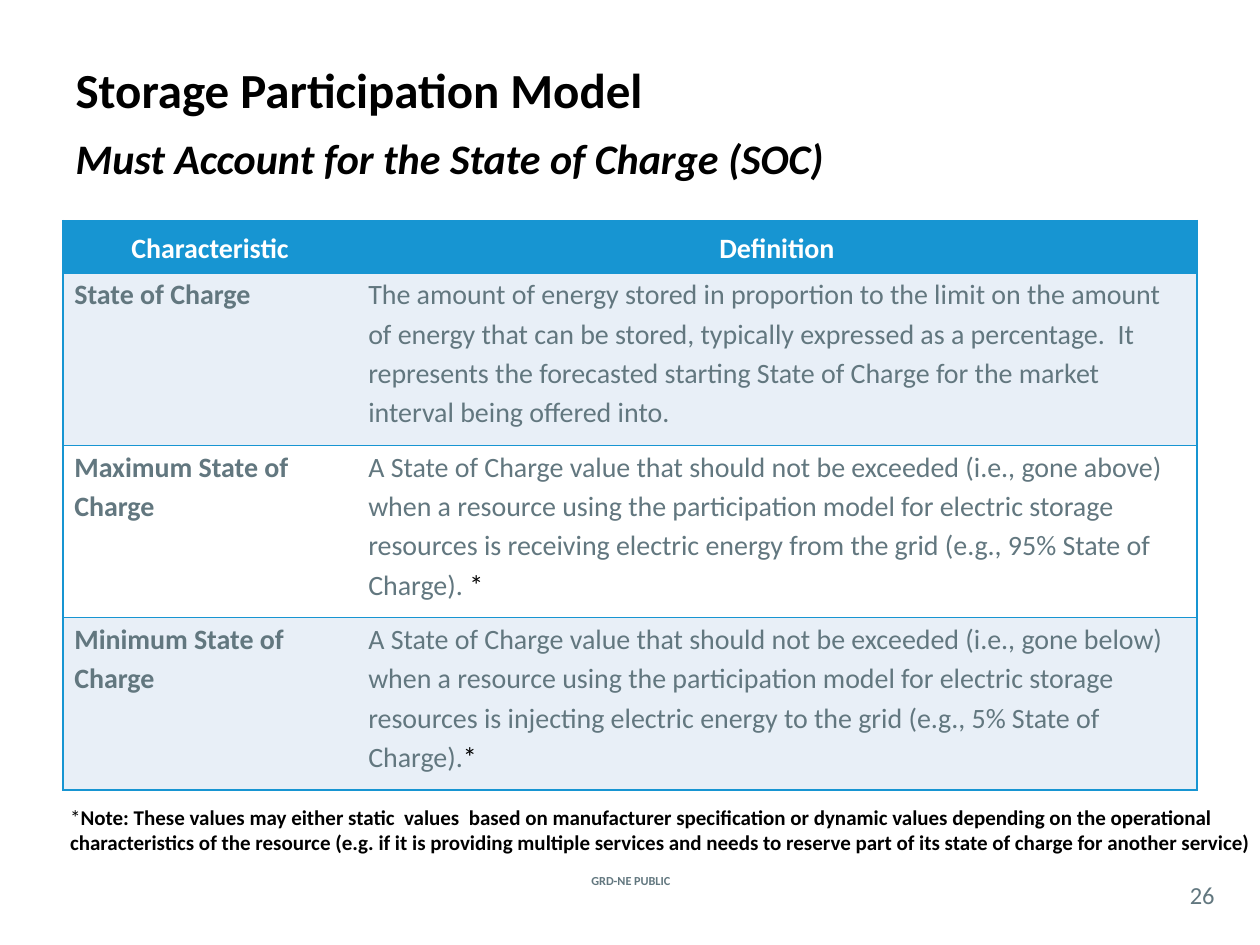
from lxml.etree import SubElement
from pptx import Presentation
from pptx.dml.color import RGBColor
from pptx.enum.text import MSO_ANCHOR as Anchor, PP_ALIGN as Align
from pptx.oxml.ns import qn
from pptx.util import Pt

BLUE = RGBColor(0x17, 0x95, 0xD2)
PALE = RGBColor(0xE8, 0xEF, 0xF7)
GRAY = RGBColor(0x62, 0x77, 0x7F)
BLACK = RGBColor(0, 0, 0)
WHITE = RGBColor(255, 255, 255)

TITLE = "Storage Participation Model"
SUBTITLE = "Must Account for the State of Charge (SOC)"
HEADS = ("Characteristic", "Definition")
# term, definition, footnote mark
TERMS = [
    ("State of Charge",
     "The amount of energy stored in proportion to the limit on the amount of "
     "energy that can be stored, typically expressed as a percentage.  It "
     "represents the forecasted starting State of Charge for the market "
     "interval being offered into.", ""),
    ("Maximum State of Charge",
     "A State of Charge value that should not be exceeded (i.e., gone above) "
     "when a resource using the participation model for electric storage "
     "resources is receiving electric energy from the grid (e.g., 95% State "
     "of Charge). ", "*"),
    ("Minimum State of Charge",
     "A State of Charge value that should not be exceeded (i.e., gone below) "
     "when a resource using the participation model for electric storage "
     "resources is injecting electric energy to the grid (e.g., 5% State of "
     "Charge).", "*"),
]
NOTE = [
    "Note: These values may either static  values  based on manufacturer "
    "specification or dynamic values depending on the operational",
    "characteristics of the resource (e.g. if it is providing multiple services "
    "and needs to reserve part of its state of charge for another service)",
]
LABEL = "GRD-NE PUBLIC"
PAGE = "26"

COLS = (168, 480)
ROWS = (30, 98.5, 98.5, 98.5)


def write(para, text, size=16, color=BLACK, bold=False, italic=False,
          align=Align.LEFT, line=1, after=0):
    para.alignment, para.line_spacing = align, line
    para.space_before, para.space_after = Pt(0), Pt(after)
    run = para.add_run()
    run.text = text
    font = run.font
    font.name, font.size = "Calibri", Pt(size)
    font.bold, font.italic = bold, italic
    font.color.rgb = color


def place(shape, left, top, width, height):
    shape.left, shape.top = Pt(left), Pt(top)
    shape.width, shape.height = Pt(width), Pt(height)


def add_box(slide, area, anchor=Anchor.TOP, wrap=True):
    frame = slide.shapes.add_textbox(*map(Pt, area)).text_frame
    frame.word_wrap, frame.vertical_anchor = wrap, anchor
    return frame


def edge(cell, sides):
    """Draw blue lines on the given sides and clear the others."""
    props = cell._tc.get_or_add_tcPr()
    for side in "LRTB":
        line = SubElement(props, qn(f"a:ln{side}"), w=str(Pt(1)))
        if side in sides:
            fill = SubElement(line, qn("a:solidFill"))
            SubElement(fill, qn("a:srgbClr"), val=str(BLUE))
        else:
            SubElement(line, qn("a:noFill"))


def add_terms(slide):
    table = slide.shapes.add_table(
        len(ROWS), len(COLS), Pt(36), Pt(126), Pt(sum(COLS)), Pt(sum(ROWS))).table
    table.horz_banding = False
    for col, width in zip(table.columns, COLS):
        col.width = Pt(width)
    for row, height in zip(table.rows, ROWS):
        row.height = Pt(height)

    for r, (term, text, mark) in enumerate([(*HEADS, ""), *TERMS]):
        head = r == 0
        back = BLUE if head else PALE if r % 2 else WHITE
        look = dict(color=WHITE if head else GRAY, line=1.15, after=10,
                    align=Align.CENTER if head else Align.LEFT)
        for c, words in enumerate((term, text)):
            cell = table.cell(r, c)
            edge(cell, "LTB" if c == 0 else "RTB")
            cell.fill.solid()
            cell.fill.fore_color.rgb = back
            cell.margin_left = cell.margin_right = Pt(6.5)
            cell.margin_top = cell.margin_bottom = Pt(0)
            cell.vertical_anchor = Anchor.MIDDLE if head else Anchor.TOP
            para = cell.text_frame.paragraphs[0]
            write(para, words, bold=head or c == 0, **look)
            if c and mark:
                write(para, mark, **{**look, "color": BLACK})


def main():
    deck = Presentation()
    deck.slide_width, deck.slide_height = Pt(720), Pt(540)
    slide = deck.slides.add_slide(deck.slide_layouts[1])
    title, body = slide.placeholders

    place(title, 36, 30, 648, 42)
    title.text_frame.vertical_anchor = Anchor.MIDDLE
    write(title.text_frame.paragraphs[0], TITLE, size=28, bold=True)

    place(body, 36, 72, 648, 36)
    para = body.text_frame.paragraphs[0]
    props = para._p.get_or_add_pPr()
    props.set("marL", "0")
    props.set("indent", "0")
    SubElement(props, qn("a:buNone"))
    write(para, SUBTITLE, size=24, bold=True, italic=True)

    add_terms(slide)

    note = add_box(slide, (33, 456, 700, 36), wrap=False)
    first = note.paragraphs[0]
    write(first, "*", size=12)
    for para, text in zip((first, note.add_paragraph()), NOTE):
        write(para, text, size=12, bold=True)

    label = add_box(slide, (307.5, 484, 106, 39), Anchor.MIDDLE)
    write(label.paragraphs[0], LABEL, size=7, color=GRAY, bold=True,
          align=Align.CENTER)

    page = add_box(slide, (672, 501, 30, 21), Anchor.MIDDLE)
    page.margin_left = page.margin_right = Pt(0)
    page.margin_top = page.margin_bottom = Pt(0)
    write(page.paragraphs[0], PAGE, size=14, color=GRAY, align=Align.CENTER)

    deck.save("out.pptx")


if __name__ == "__main__":
    main()
